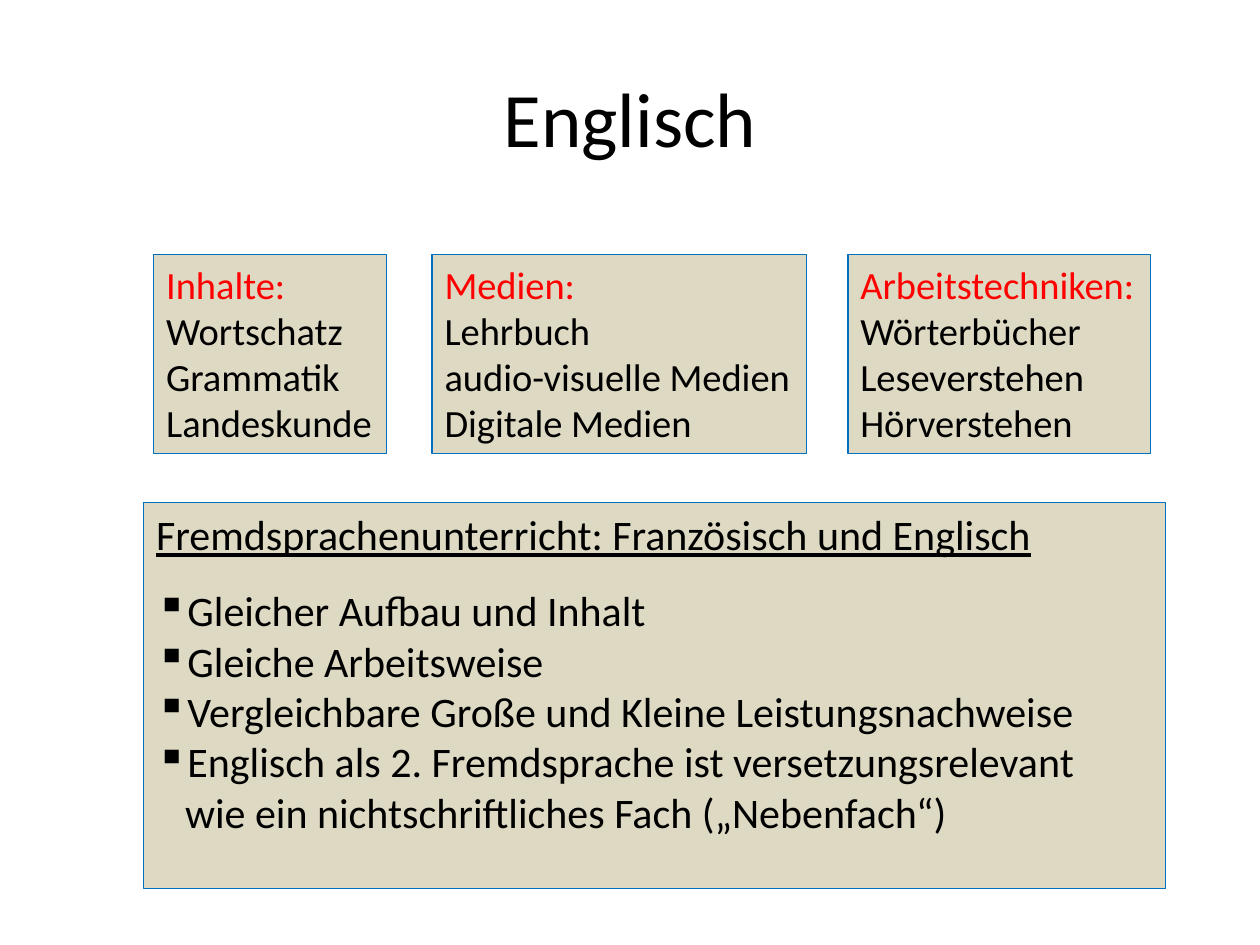
import pptx
import pptx.dml.color
import pptx.enum.text
import pptx.oxml.ns
import pptx.util
from lxml import etree
from pptx.util import Inches

BLACK = pptx.dml.color.RGBColor(0x00, 0x00, 0x00)
RED = pptx.dml.color.RGBColor(0xFF, 0x00, 0x00)
BEIGE = pptx.dml.color.RGBColor(0xDD, 0xD9, 0xC3)
BLUE = pptx.dml.color.RGBColor(0x00, 0x70, 0xC0)
FONT = "Calibri"

TOPICS = [
    (1.22, 1.85, ["Inhalte:", "Wortschatz", "Grammatik", "Landeskunde"]),
    (3.43, 2.97, ["Medien:", "Lehrbuch", "audio-visuelle Medien", "Digitale Medien"]),
    (6.73, 2.4, ["Arbeitstechniken:", "Wörterbücher", "Leseverstehen", "Hörverstehen"]),
]
COMPARISON_HEADING = "Fremdsprachenunterricht: Französisch und Englisch"
COMPARISON_POINTS = [
    "Gleicher Aufbau und Inhalt",
    "Gleiche Arbeitsweise",
    "Vergleichbare Große und Kleine Leistungsnachweise",
    "Englisch als 2. Fremdsprache ist versetzungsrelevant",
]
CONTINUATION = "wie ein nichtschriftliches Fach („Nebenfach“)"


def add_run(paragraph, text, size, color=BLACK):
    run = paragraph.add_run()
    run.text = text
    run.font.name = FONT
    run.font.size = pptx.util.Pt(size)
    run.font.color.rgb = color
    return run


def set_indent(paragraph, margin, bullet=None):
    properties = paragraph._p.get_or_add_pPr()
    properties.set("marL", str(Inches(margin)))
    if bullet:
        properties.set("indent", str(-Inches(margin)))
        mark = etree.SubElement(properties, pptx.oxml.ns.qn("a:buChar"))
        mark.set("char", bullet)


def add_title(slide, text):
    title = slide.shapes.title
    title.left, title.top = Inches(0.5), Inches(0.3)
    title.width, title.height = Inches(9), Inches(1.25)
    title.text_frame.vertical_anchor = pptx.enum.text.MSO_ANCHOR.MIDDLE
    paragraph = title.text_frame.paragraphs[0]
    paragraph.alignment = pptx.enum.text.PP_ALIGN.CENTER
    add_run(paragraph, text, 44)


def add_panel(slide, left, top, width, height):
    panel = slide.shapes.add_textbox(
        Inches(left), Inches(top), Inches(width), Inches(height))
    panel.fill.solid()
    panel.fill.fore_color.rgb = BEIGE
    panel.line.color.rgb = BLUE
    panel.line.width = pptx.util.Pt(0.75)
    return panel.text_frame


def add_topic(slide, left, width, lines):
    frame = add_panel(slide, left, 2.02, width, 1.58)
    frame.word_wrap = False
    frame.auto_size = pptx.enum.text.MSO_AUTO_SIZE.SHAPE_TO_FIT_TEXT
    heading, *entries = lines
    add_run(frame.paragraphs[0], heading, 22, RED)
    for entry in entries:
        add_run(frame.add_paragraph(), entry, 22)


def add_comparison(slide):
    frame = add_panel(slide, 1.14, 3.99, 8.11, 3.06)
    frame.word_wrap = True
    add_run(frame.paragraphs[0], COMPARISON_HEADING, 24).font.underline = True
    for index, point in enumerate(COMPARISON_POINTS):
        paragraph = frame.add_paragraph()
        set_indent(paragraph, 0.19, "▪")
        if index == 0:
            paragraph.space_before = pptx.util.Pt(14.5)
        add_run(paragraph, point, 24)
    continuation = frame.add_paragraph()
    set_indent(continuation, 0.23)
    add_run(continuation, CONTINUATION, 24)


def main():
    presentation = pptx.Presentation()
    presentation.slide_width = Inches(10)
    presentation.slide_height = Inches(7.5)
    slide = presentation.slides.add_slide(presentation.slide_layouts[5])
    add_title(slide, "Englisch")
    for left, width, lines in TOPICS:
        add_topic(slide, left, width, lines)
    add_comparison(slide)
    presentation.save("out.pptx")


if __name__ == "__main__":
    main()
